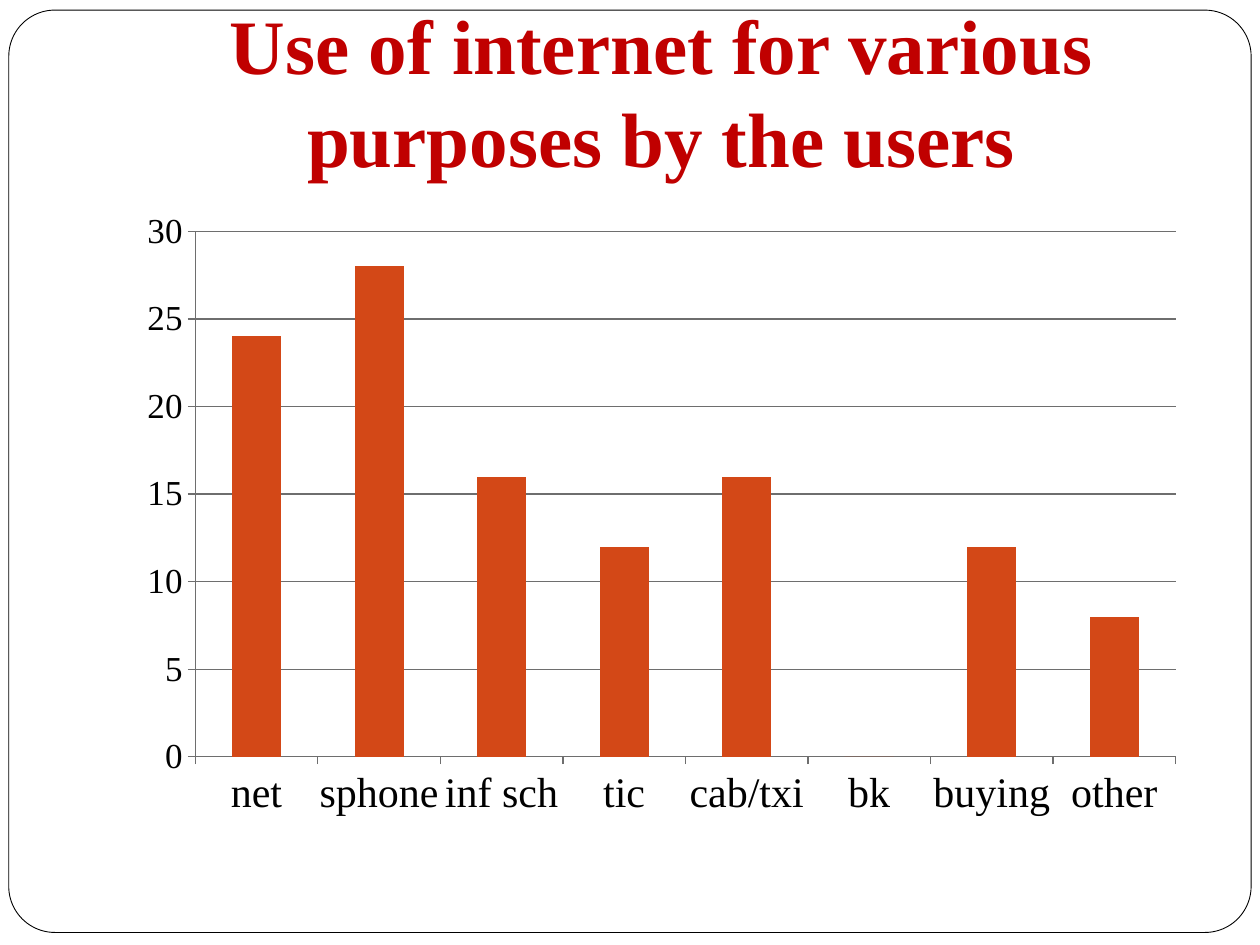
"""Build a slide charting what the users do on the internet."""
from typing import NamedTuple

import pptx
import pptx.chart.axis
import pptx.chart.data
import pptx.dml.color
import pptx.enum.chart
import pptx.enum.shapes
import pptx.enum.text
import pptx.slide
import pptx.util

BLACK = pptx.dml.color.RGBColor(0x00, 0x00, 0x00)
WHITE = pptx.dml.color.RGBColor(0xFF, 0xFF, 0xFF)
CRIMSON = pptx.dml.color.RGBColor(0xC0, 0x00, 0x00)
ORANGE = pptx.dml.color.RGBColor(0xD3, 0x48, 0x17)
GRAY = pptx.dml.color.RGBColor(0x6E, 0x6E, 0x6E)

FONT = "Times New Roman"
WIDTH = pptx.util.Inches(10)
HEIGHT = pptx.util.Inches(7.5)


class Area(NamedTuple):
    """A place on the slide, in percent of its width and height."""

    left: float
    top: float
    width: float
    height: float

    def box(self) -> tuple[int, int, int, int]:
        return (
            int(WIDTH * self.left / 100),
            int(HEIGHT * self.top / 100),
            int(WIDTH * self.width / 100),
            int(HEIGHT * self.height / 100),
        )


class Purpose(NamedTuple):
    """One use of the internet and its number of users."""

    label: str
    users: int


BORDER = Area(0.7, 1.07, 98.6, 97.6)
HEADING = Area(10, 4, 85, 16.67)
PLOT = Area(10, 21.07, 85, 66.67)

PURPOSES = [
    Purpose("net", 24),
    Purpose("sphone", 28),
    Purpose("inf sch", 16),
    Purpose("tic", 12),
    Purpose("cab/txi", 16),
    Purpose("bk", 0),
    Purpose("buying", 12),
    Purpose("other", 8),
]


def add_border(slide: pptx.slide.Slide) -> None:
    border = slide.shapes.add_shape(
        pptx.enum.shapes.MSO_SHAPE.ROUNDED_RECTANGLE, *BORDER.box()
    )
    border.adjustments[0] = 0.05
    border.shadow.inherit = False
    border.fill.solid()
    border.fill.fore_color.rgb = WHITE
    border.line.color.rgb = BLACK
    border.line.width = pptx.util.Pt(0.5)


def add_heading(slide: pptx.slide.Slide, wording: str) -> None:
    frame = slide.shapes.add_textbox(*HEADING.box()).text_frame
    frame.word_wrap = True
    frame.vertical_anchor = pptx.enum.text.MSO_ANCHOR.BOTTOM
    frame.margin_bottom = pptx.util.Inches(0.1)
    paragraph = frame.paragraphs[0]
    paragraph.alignment = pptx.enum.text.PP_ALIGN.CENTER
    run = paragraph.add_run()
    run.text = wording
    run.font.name = FONT
    run.font.size = pptx.util.Pt(44)
    run.font.bold = True
    run.font.color.rgb = CRIMSON


def style_axis(axis: pptx.chart.axis._BaseAxis, size: float) -> None:
    axis.major_tick_mark = pptx.enum.chart.XL_TICK_MARK.OUTSIDE
    axis.minor_tick_mark = pptx.enum.chart.XL_TICK_MARK.NONE
    axis.format.line.color.rgb = GRAY
    axis.format.line.width = pptx.util.Pt(0.75)
    labels = axis.tick_labels.font
    labels.name = FONT
    labels.size = pptx.util.Pt(size)
    labels.color.rgb = BLACK


def add_usage_chart(slide: pptx.slide.Slide, purposes: list[Purpose]) -> None:
    usage = pptx.chart.data.CategoryChartData()
    usage.categories = [purpose.label for purpose in purposes]
    usage.add_series("Series 1", [purpose.users for purpose in purposes])
    chart = slide.shapes.add_chart(
        pptx.enum.chart.XL_CHART_TYPE.COLUMN_CLUSTERED, *PLOT.box(), usage
    ).chart
    chart.has_title = False
    chart.has_legend = False
    chart.font.name = FONT
    chart.font.size = pptx.util.Pt(10)
    chart.font.color.rgb = BLACK

    style_axis(chart.category_axis, 24)
    style_axis(chart.value_axis, 20)
    chart.value_axis.minimum_scale = 0
    chart.value_axis.maximum_scale = 30
    chart.value_axis.major_unit = 5
    chart.value_axis.has_major_gridlines = True
    gridline = chart.value_axis.major_gridlines.format.line
    gridline.color.rgb = GRAY
    gridline.width = pptx.util.Pt(0.75)

    columns = chart.plots[0]
    columns.gap_width = 150
    columns.vary_by_categories = False
    fill = columns.series[0].format.fill
    fill.solid()
    fill.fore_color.rgb = ORANGE


def main() -> None:
    presentation = pptx.Presentation()
    presentation.slide_width = WIDTH
    presentation.slide_height = HEIGHT
    slide = presentation.slides.add_slide(presentation.slide_layouts[6])
    add_border(slide)
    add_heading(slide, "Use of internet for various purposes by the users")
    add_usage_chart(slide, PURPOSES)
    presentation.save("out.pptx")


if __name__ == "__main__":
    main()
